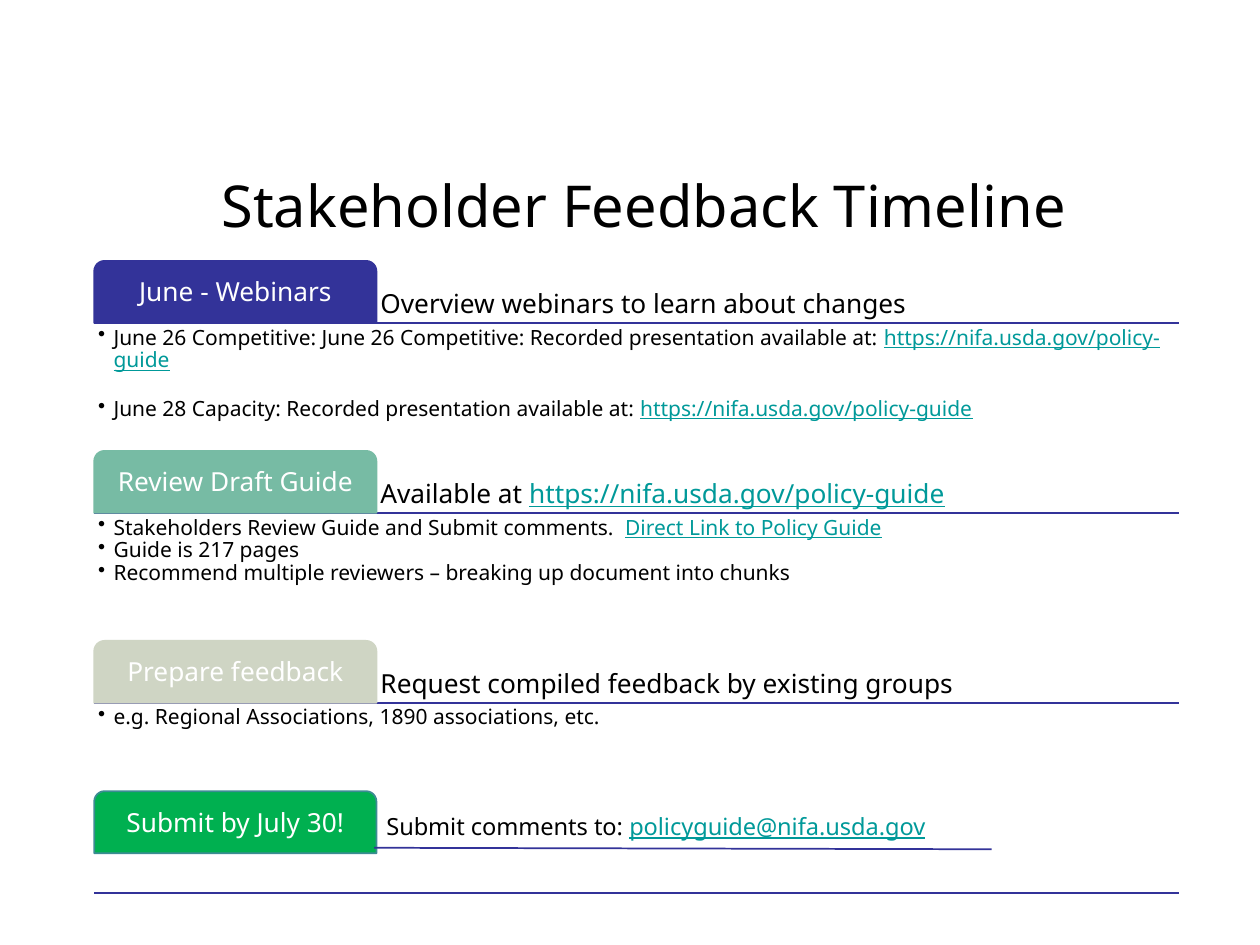
from lxml import etree
from pptx import Presentation
from pptx.dml.color import RGBColor
from pptx.enum.shapes import MSO_CONNECTOR, MSO_SHAPE
from pptx.enum.text import MSO_ANCHOR, PP_ALIGN
from pptx.oxml.ns import qn
from pptx.util import Cm, Pt

STRAIGHT = MSO_CONNECTOR.STRAIGHT
TAB_SHAPE = MSO_SHAPE.ROUND_2_SAME_RECTANGLE
TOP, MIDDLE, BOTTOM = MSO_ANCHOR.TOP, MSO_ANCHOR.MIDDLE, MSO_ANCHOR.BOTTOM
CENTER = PP_ALIGN.CENTER

FONT = "Noto Sans"
COLORS = {
    "text": "000000", "white": "FFFFFF", "link": "009999", "rule": "333399",
    "webinars": "333399", "review": "77BBA4", "prepare": "CFD5C4",
    "submit": "00B050", "submit_edge": "3C8C93",
}

# Measures in centimetres
LEFT, WIDTH = 1.9, 21.87
TAB_WIDTH, TAB_HEIGHT = 5.69, 1.25
FIRST_TOP, PITCH = 5.26, 3.83
DETAIL_HEIGHT = 2.52
INSET = 0.08
INDENT = 0.31
LINE_SPACING = 0.9

GUIDE_LINK = ("https://nifa.usda.gov/policy-guide", "link")

# Tab label, tab colour, heading spans, bullets as (space before in points, spans)
STAGES = [
    ("June - Webinars", "webinars",
     [("Overview webinars to learn about changes", "text")],
     [(0, [("June 26 Competitive: June 26 Competitive: "
            "Recorded presentation available at: ", "text"), GUIDE_LINK]),
      (14.8, [("June 28 Capacity: Recorded presentation available at: ", "text"),
              GUIDE_LINK])]),
    ("Review Draft Guide", "review",
     [("Available at ", "text"), GUIDE_LINK],
     [(0, [("Stakeholders Review Guide and Submit comments.  ", "text"),
           ("Direct Link to Policy Guide", "link")]),
      (0, [("Guide is 217 pages", "text")]),
      (0, [("Recommend multiple reviewers – breaking up document into chunks",
            "text")])]),
    ("Prepare feedback", "prepare",
     [("Request compiled feedback by existing groups", "text")],
     [(0, [("e.g. Regional Associations, 1890 associations, etc.", "text")])]),
]


def rgb(name):
    return RGBColor.from_string(COLORS[name])


def add_spans(para, spans, size):
    for text, color in spans:
        span = para.add_run()
        span.text = text
        span.font.name = FONT
        span.font.size = Pt(size)
        span.font.color.rgb = rgb(color)
        if color == "link":
            span.font.underline = True


def set_frame(frame, anchor, inset=INSET):
    frame.word_wrap = True
    frame.vertical_anchor = anchor
    frame.margin_left = frame.margin_right = Cm(inset)
    frame.margin_top = frame.margin_bottom = Cm(inset)


def add_rule(page, left, top, right, bottom):
    rule = page.shapes.add_connector(STRAIGHT, Cm(left), Cm(top), Cm(right), Cm(bottom))
    rule.line.color.rgb = rgb("rule")
    rule.line.width = Pt(1)
    etree.SubElement(rule._element.spPr, qn("a:effectLst"))


def add_tab(page, top, label, fill, edge):
    tab = page.shapes.add_shape(TAB_SHAPE, Cm(LEFT), Cm(top), Cm(TAB_WIDTH), Cm(TAB_HEIGHT))
    tab.shadow.inherit = False
    tab.fill.solid()
    tab.fill.fore_color.rgb = rgb(fill)
    tab.line.color.rgb = rgb(edge)
    tab.line.width = Pt(1)
    set_frame(tab.text_frame, MIDDLE)
    para = tab.text_frame.paragraphs[0]
    para.alignment = CENTER
    para.line_spacing = LINE_SPACING
    add_spans(para, [(label, "white")], 15)


def add_heading(page, top, spans):
    box = page.shapes.add_textbox(Cm(LEFT + TAB_WIDTH), Cm(top),
                                  Cm(WIDTH - TAB_WIDTH), Cm(TAB_HEIGHT))
    set_frame(box.text_frame, BOTTOM)
    para = box.text_frame.paragraphs[0]
    para.line_spacing = LINE_SPACING
    add_spans(para, spans, 15)


def add_bullets(page, top, bullets):
    box = page.shapes.add_textbox(Cm(LEFT), Cm(top), Cm(WIDTH), Cm(DETAIL_HEIGHT))
    frame = box.text_frame
    set_frame(frame, TOP)
    for index, (space_before, spans) in enumerate(bullets):
        para = frame.add_paragraph() if index else frame.paragraphs[0]
        properties = para._p.get_or_add_pPr()
        properties.set("marL", str(Cm(INDENT)))
        properties.set("indent", str(-Cm(INDENT)))
        etree.SubElement(properties, qn("a:buChar"), char="•")
        para.line_spacing = LINE_SPACING
        if space_before:
            para.space_before = Pt(space_before)
        add_spans(para, spans, 12)


def add_title(page, text):
    title = page.shapes.title
    title.left, title.top = Cm(2.18), Cm(2.62)
    title.width, title.height = Cm(21.59), Cm(3.02)
    title.text_frame.vertical_anchor = MIDDLE
    para = title.text_frame.paragraphs[0]
    para.alignment = CENTER
    add_spans(para, [(text, "text")], 33)


def add_submission(page):
    add_tab(page, 15.95, "Submit by July 30!", "submit", "submit_edge")
    box = page.shapes.add_textbox(Cm(7.54), Cm(16.23), Cm(15.88), Cm(0.84))
    set_frame(box.text_frame, TOP, 0.25)
    box.text_frame.margin_top = box.text_frame.margin_bottom = Cm(0.13)
    add_spans(box.text_frame.paragraphs[0],
              [("Submit comments to: ", "text"), ("policyguide@nifa.usda.gov", "link")],
              13.5)
    add_rule(page, 7.54, 17.09, 19.99, 17.12)


def main():
    deck = Presentation()
    deck.slide_width, deck.slide_height = Cm(25.4), Cm(19.05)
    page = deck.slides.add_slide(deck.slide_layouts[5])
    add_title(page, "Stakeholder Feedback Timeline")
    for index in range(len(STAGES) + 1):
        level = FIRST_TOP + TAB_HEIGHT + index * PITCH
        add_rule(page, LEFT, level, LEFT + WIDTH, level)
    for index, (label, color, heading, bullets) in enumerate(STAGES):
        top = FIRST_TOP + index * PITCH
        add_heading(page, top, heading)
        add_tab(page, top, label, color, color)
        add_bullets(page, top + TAB_HEIGHT, bullets)
    add_submission(page)
    deck.save("out.pptx")


if __name__ == "__main__":
    main()
